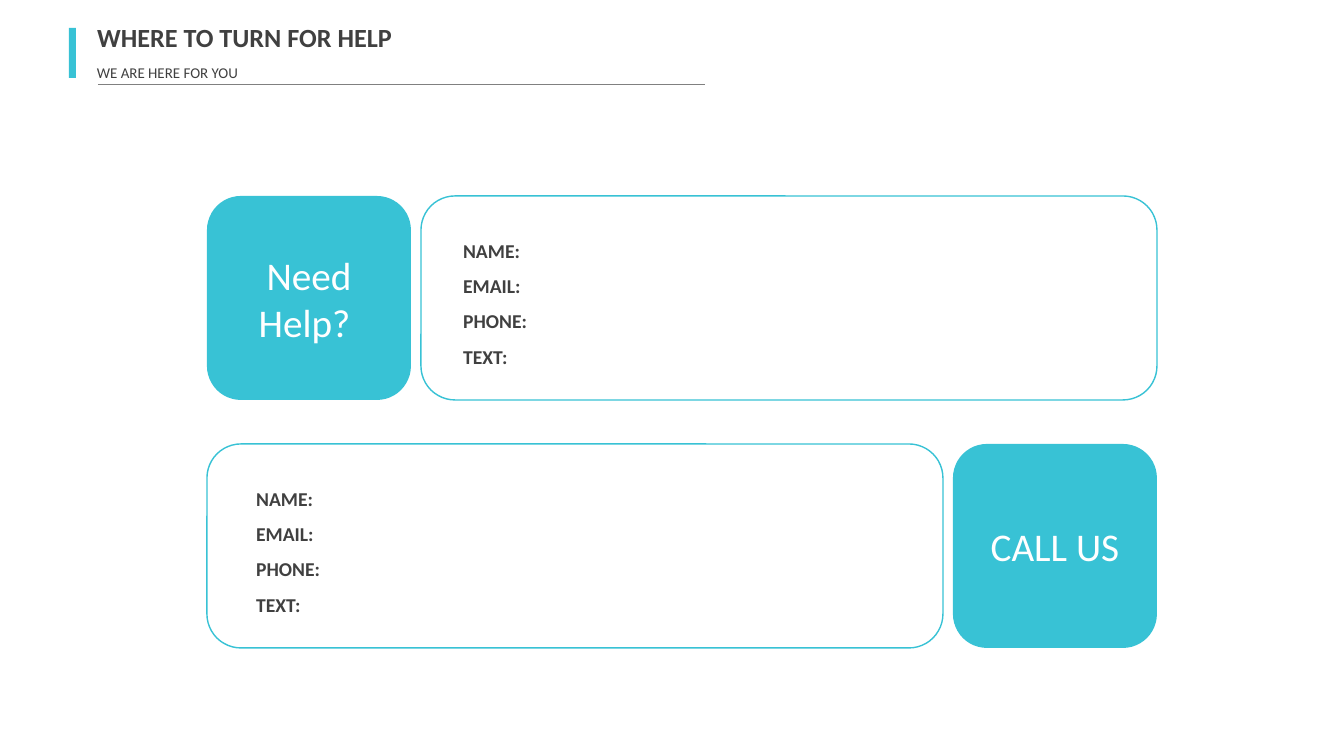
"""Build the help contacts slide."""
from lxml.etree import SubElement
from pptx import Presentation
from pptx.dml.color import RGBColor
from pptx.enum.shapes import MSO_CONNECTOR, MSO_SHAPE
from pptx.enum.text import MSO_ANCHOR as Anchor, MSO_AUTO_SIZE as AutoSize, PP_ALIGN as Align
from pptx.oxml.ns import qn
from pptx.util import Emu, Pt

HEADING = "WHERE TO TURN FOR HELP"
SUBHEADING = "WE ARE HERE FOR YOU"
FIELDS = ["NAME:", "EMAIL:", "PHONE:", "TEXT:"]
CONTACTS = [
    {"label": "Need Help? ", "label_first": True, "field_inset": 32},
    {"label": "CALL US", "label_first": False, "field_inset": 39},
]
COLORS = {"accent": "38C2D5", "text": "404040", "white": "FFFFFF", "rule": "808080"}
FONT = "Calibri"

SLIDE_W, SLIDE_H = 1344, 756
ROW_LEFT, ROW_TOP, ROW_PITCH = 207, 196, 248
TILE, PANEL_W, GAP = 204, 736, 10
FIELDS_TOP, FIELDS_W, FIELDS_H = 26, 619, 152


def px(length):
    return Emu(round(length * 914400 / 100.8))


def rgb(name):
    return RGBColor.from_string(COLORS[name])


def place(shape, left, top, width, height):
    shape.left, shape.top = px(left), px(top)
    shape.width, shape.height = px(width), px(height)


def write(shape, lines, size, color="text", bold=False, align=Align.LEFT,
          anchor=Anchor.TOP, spacing=1.0):
    frame = shape.text_frame
    frame.text = "\n".join(lines)
    frame.word_wrap = True
    frame.auto_size = AutoSize.NONE
    frame.vertical_anchor = anchor
    for paragraph in frame.paragraphs:
        paragraph.alignment = align
        paragraph.line_spacing = spacing
        paragraph.space_before = Pt(0)
        font = paragraph.runs[0].font
        font.name, font.size, font.bold = FONT, Pt(size), bold
        font.color.rgb = rgb(color)


def remove_bullets(shape):
    for paragraph in shape.text_frame.paragraphs:
        properties = paragraph._p.get_or_add_pPr()
        properties.set("marL", "0")
        properties.set("indent", "0")
        SubElement(properties, qn("a:buNone"))


def add_block(slide, kind, box, fill, outline=None):
    block = slide.shapes.add_shape(kind, *map(px, box))
    block.shadow.inherit = False
    block.fill.solid()
    block.fill.fore_color.rgb = rgb(fill)
    if outline:
        block.line.color.rgb = rgb(outline)
        block.line.width = Pt(1)
    else:
        block.line.fill.background()
    return block


def add_header(slide):
    heading = slide.shapes.title
    place(heading, 87, 16, 426, 42)
    write(heading, [HEADING], 18.7, bold=True, anchor=Anchor.MIDDLE)
    subheading = slide.shapes.add_textbox(*map(px, (87, 50, 387, 34)))
    write(subheading, [SUBHEADING], 10.7, spacing=1.5)
    add_block(slide, MSO_SHAPE.RECTANGLE, (69, 28, 7, 50), "accent")
    rule = slide.shapes.add_connector(MSO_CONNECTOR.STRAIGHT, *map(px, (98, 84, 705, 84)))
    rule.line.color.rgb = rgb("rule")
    rule.line.width = Pt(0.5)
    SubElement(rule.element.spPr, qn("a:effectLst"))


def add_contact(slide, contact, fields, top):
    if contact["label_first"]:
        tile_left, panel_left = ROW_LEFT, ROW_LEFT + TILE + GAP
    else:
        tile_left, panel_left = ROW_LEFT + PANEL_W + GAP, ROW_LEFT
    rounded = MSO_SHAPE.ROUNDED_RECTANGLE
    add_block(slide, rounded, (panel_left, top, PANEL_W, TILE), "white", "accent")
    tile = add_block(slide, rounded, (tile_left, top, TILE, TILE), "accent")
    write(tile, [contact["label"]], 28, color="white", align=Align.CENTER, anchor=Anchor.MIDDLE)
    place(fields, panel_left + contact["field_inset"], top + FIELDS_TOP, FIELDS_W, FIELDS_H)
    write(fields, FIELDS, 14, bold=True, spacing=1.5)
    remove_bullets(fields)
    slide.shapes.element.append(fields.element)


def main():
    deck = Presentation()
    deck.slide_width, deck.slide_height = px(SLIDE_W), px(SLIDE_H)
    slide = deck.slides.add_slide(deck.slide_layouts.get_by_name("Two Content"))
    field_lists = list(slide.placeholders)[1:]
    add_header(slide)
    for row, (contact, fields) in enumerate(zip(CONTACTS, field_lists)):
        add_contact(slide, contact, fields, ROW_TOP + row * ROW_PITCH)
    deck.save("out.pptx")


if __name__ == "__main__":
    main()
